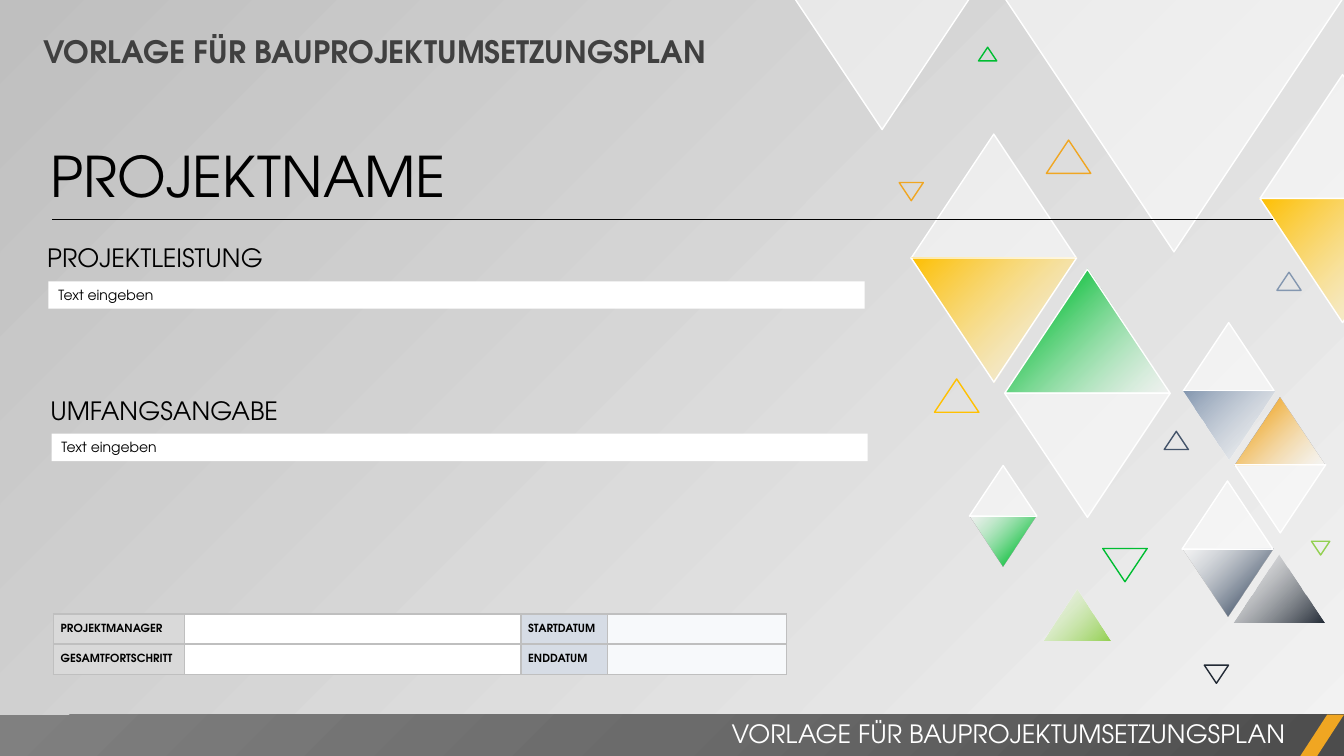
from dataclasses import dataclass

from lxml.etree import SubElement
from pptx import Presentation
from pptx.dml.color import RGBColor
from pptx.enum.shapes import MSO_CONNECTOR, MSO_SHAPE
from pptx.enum.text import MSO_ANCHOR, MSO_AUTO_SIZE, PP_ALIGN
from pptx.oxml import parse_xml
from pptx.oxml.ns import nsdecls, qn
from pptx.util import Cm, Pt

FONT = "TeX Gyre Adventor"
TITLE = "VORLAGE FÜR BAUPROJEKTUMSETZUNGSPLAN"
WIDTH, HEIGHT = 33.87, 19.05
LINEAR = '<a:lin ang="13500000" scaled="0"/>'
CORNER = '<a:path path="circle"><a:fillToRect l="100000" t="100000"/></a:path>'
GREEN, GOLD, ORANGE, LIME = "00BD32", "FFC000", "F0A622", "92D050"
SLATE, STEEL, NIGHT, WHITE = "44546A", "8497B0", "222A35", "FFFFFF"
BLACK = "000000"


@dataclass(frozen=True)
class Stop:
    position: int
    color: str
    alpha: int = 100


@dataclass(frozen=True)
class Triangle:
    x: float
    y: float
    width: float
    down: bool = False
    stops: tuple[Stop, ...] = ()
    line: str = ""


@dataclass(frozen=True)
class Label:
    text: str
    x: float
    y: float
    width: float
    height: float
    size: int
    color: str = BLACK
    bold: bool = False
    align: PP_ALIGN = PP_ALIGN.LEFT


@dataclass(frozen=True)
class Section:
    heading: str
    x: float
    y: float


def fade_out(color: str) -> tuple[Stop, ...]:
    return Stop(0, color), Stop(100, WHITE, 50)


def fade_in(color: str) -> tuple[Stop, ...]:
    return Stop(0, WHITE, 50), Stop(82, color)


GLASS = (Stop(0, WHITE, 50),)
BIG, MEDIUM, SMALL = 4.17, 2.29, 1.7
RING, RING_SMALL, RING_TINY = 1.12, 0.61, 0.46

TRIANGLES = [
    Triangle(22.96, 3.38, BIG, False, GLASS, WHITE),
    Triangle(22.96, 6.5, BIG, True, fade_out(GOLD), WHITE),
    Triangle(25.32, 6.78, BIG, False, fade_in(GREEN), WHITE),
    Triangle(25.32, 9.91, BIG, True, GLASS, WHITE),
    Triangle(25.32, -0.05, 8.53, True, GLASS, WHITE),
    Triangle(31.09, 13.97, MEDIUM, False, fade_out(NIGHT)),
    Triangle(29.79, 13.82, MEDIUM, True, fade_in(SLATE)),
    Triangle(29.79, 12.12, MEDIUM, False, GLASS, WHITE),
    Triangle(29.82, 8.13, MEDIUM, False, GLASS, WHITE),
    Triangle(29.82, 9.86, MEDIUM, True, fade_out(STEEL)),
    Triangle(31.12, 10.01, MEDIUM, False, fade_in(ORANGE)),
    Triangle(31.12, 11.71, MEDIUM, True, GLASS, WHITE),
    Triangle(26.29, 14.86, SMALL, False, fade_out(LIME)),
    Triangle(24.43, 13, SMALL, True, fade_in(GREEN)),
    Triangle(24.43, 11.73, SMALL, False, GLASS, WHITE),
    Triangle(31.75, 1.88, BIG, False, GLASS, WHITE),
    Triangle(31.75, 5, BIG, True, fade_out(GOLD), WHITE),
    Triangle(27.79, 13.82, RING, True, line=GREEN),
    Triangle(23.55, 9.55, RING, line=GOLD),
    Triangle(29.34, 10.87, RING_SMALL, line=SLATE),
    Triangle(30.35, 16.76, RING_SMALL, True, line=NIGHT),
    Triangle(22.66, 4.6, RING_SMALL, True, line=ORANGE),
    Triangle(32.18, 6.86, RING_SMALL, line=STEEL),
    Triangle(24.66, 1.19, RING_TINY, line=GREEN),
    Triangle(33.05, 13.64, RING_TINY, True, line=LIME),
    Triangle(26.37, 3.53, RING, line=ORANGE),
    Triangle(20.02, -0.05, 4.42, True, GLASS, WHITE),
]
LABELS = [
    Label(TITLE, 0.84, 0.71, 21.87, 1.19, 22, "404040", True),
    Label(TITLE, 13.34, 17.98, 19.3, 1.02, 18, WHITE, align=PP_ALIGN.RIGHT),
    Label("PROJEKTNAME", 1.02, 3.43, 31.17, 1.96, 40),
]
SECTIONS = [Section("PROJEKTLEISTUNG", 0.94, 5.99), Section("UMFANGSANGABE", 1.02, 9.83)]
COLUMNS = [(3.3, "D9D9D9"), (8.48, WHITE), (2.18, "D6DCE5"), (4.52, "F7F9FB")]
ROWS = [("PROJEKTMANAGER", "", "STARTDATUM", ""), ("GESAMTFORTSCHRITT", "", "ENDDATUM", "")]


def rgb(color: str) -> RGBColor:
    return RGBColor.from_string(color)


def paint(owner, fill, stops: tuple[Stop, ...], shade: str = LINEAR) -> None:
    if not stops:
        fill.background()
        return
    fill.solid()
    solid = owner.element.find(".//" + qn("a:solidFill"))
    colors = [f'<a:srgbClr val="{s.color}"><a:alpha val="{s.alpha * 1000}"/></a:srgbClr>' for s in stops]
    if len(stops) == 1:
        xml = f'<a:solidFill {nsdecls("a")}>{colors[0]}</a:solidFill>'
    else:
        marks = "".join(f'<a:gs pos="{s.position * 1000}">{c}</a:gs>' for s, c in zip(stops, colors))
        xml = f'<a:gradFill {nsdecls("a")} rotWithShape="1"><a:gsLst>{marks}</a:gsLst>{shade}</a:gradFill>'
    solid.getparent().replace(solid, parse_xml(xml))


def add_block(shapes, kind, x: float, y: float, width: float, height: float,
              stops: tuple[Stop, ...], line: str = "", shade: str = LINEAR):
    sp = shapes.add_shape(kind, Cm(x), Cm(y), Cm(width), Cm(height))
    sp.shadow.inherit = False
    paint(sp, sp.fill, stops, shade)
    if line:
        sp.line.color.rgb = rgb(line)
        sp.line.width = Pt(1)
    else:
        sp.line.fill.background()
    return sp


def add_text(p, text: str, size: int, color: str = BLACK, bold: bool = False) -> None:
    r = p.add_run()
    r.text = text
    r.font.name = FONT
    r.font.size = Pt(size)
    r.font.bold = bold
    r.font.color.rgb = rgb(color)


def write_label(sp, label: Label) -> None:
    tf = sp.text_frame
    tf.word_wrap = True
    tf.auto_size = MSO_AUTO_SIZE.SHAPE_TO_FIT_TEXT
    tf.vertical_anchor = MSO_ANCHOR.TOP
    p = tf.paragraphs[0]
    p.alignment = label.align
    add_text(p, label.text, label.size, label.color, label.bold)


def add_label(shapes, label: Label) -> None:
    sp = shapes.add_textbox(Cm(label.x), Cm(label.y), Cm(label.width), Cm(label.height))
    write_label(sp, label)


def add_section(shapes, section: Section) -> None:
    add_label(shapes, Label(section.heading, section.x, section.y, 7.75, 1.02, 18))
    field = Label("Text eingeben", section.x + 0.28, section.y + 1.1, 20.57, 0.69, 10)
    sp = add_block(shapes, MSO_SHAPE.RECTANGLE, field.x, field.y, field.width, field.height, (Stop(0, WHITE),))
    write_label(sp, field)


def fill_cell(cell, text: str, color: str) -> None:
    tc_pr = cell._tc.get_or_add_tcPr()
    for side in ("lnL", "lnR", "lnT", "lnB"):
        ln = SubElement(tc_pr, qn(f"a:{side}"), w=str(Pt(1)))
        SubElement(SubElement(ln, qn("a:solidFill")), qn("a:srgbClr"), val="BFBFBF")
    cell.fill.solid()
    cell.fill.fore_color.rgb = rgb(color)
    cell.vertical_anchor = MSO_ANCHOR.MIDDLE
    cell.margin_left = cell.margin_right = Cm(0.18)
    cell.margin_top = cell.margin_bottom = 0
    p = cell.text_frame.paragraphs[0]
    p.line_spacing = 1.07
    if text:
        add_text(p, text, 8, bold=True)
    SubElement(p._p, qn("a:endParaRPr"), sz="800")


def add_project_table(shapes) -> None:
    width = sum(w for w, _ in COLUMNS)
    table = shapes.add_table(len(ROWS), len(COLUMNS), Cm(1.35), Cm(15.47), Cm(width), Cm(1.52)).table
    table.first_row = table.horz_banding = False
    for j, (column_width, color) in enumerate(COLUMNS):
        table.columns[j].width = Cm(column_width)
        for i, texts in enumerate(ROWS):
            table.rows[i].height = Cm(0.76)
            fill_cell(table.cell(i, j), texts[j], color)


def main() -> None:
    prs = Presentation()
    prs.slide_width, prs.slide_height = Cm(WIDTH), Cm(HEIGHT)
    s = prs.slides.add_slide(prs.slide_layouts[6])
    paint(s, s.background.fill, (Stop(0, "F2F2F2", 40), Stop(100, "BFBFBF")))
    group = s.shapes.add_group_shape()
    for t in TRIANGLES:
        sp = add_block(group.shapes, MSO_SHAPE.ISOSCELES_TRIANGLE, t.x, t.y, t.width, t.width * 0.75, t.stops, t.line)
        sp.rotation = 180 if t.down else 0
    footer = (Stop(0, "4C4C4C"), Stop(50, "6B6B6B"), Stop(100, "808080"))
    add_block(s.shapes, MSO_SHAPE.RECTANGLE, 0, 18.01, WIDTH, 1.04, footer, shade=CORNER)
    accent = add_block(s.shapes, MSO_SHAPE.PARALLELOGRAM, 32.77, 18.01, 1.1, 1.04, (Stop(0, ORANGE),))
    accent.adjustments[0] = 0.65
    for label in LABELS:
        add_label(s.shapes, label)
    rule = s.shapes.add_connector(MSO_CONNECTOR.STRAIGHT, Cm(1.32), Cm(5.54), Cm(32.08), Cm(5.54))
    rule.line.color.rgb = rgb(BLACK)
    rule.line.width = Pt(0.5)
    SubElement(rule.element.spPr, qn("a:effectLst"))
    add_project_table(s.shapes)
    for section in SECTIONS:
        add_section(s.shapes, section)
    prs.save("out.pptx")


if __name__ == "__main__":
    main()
